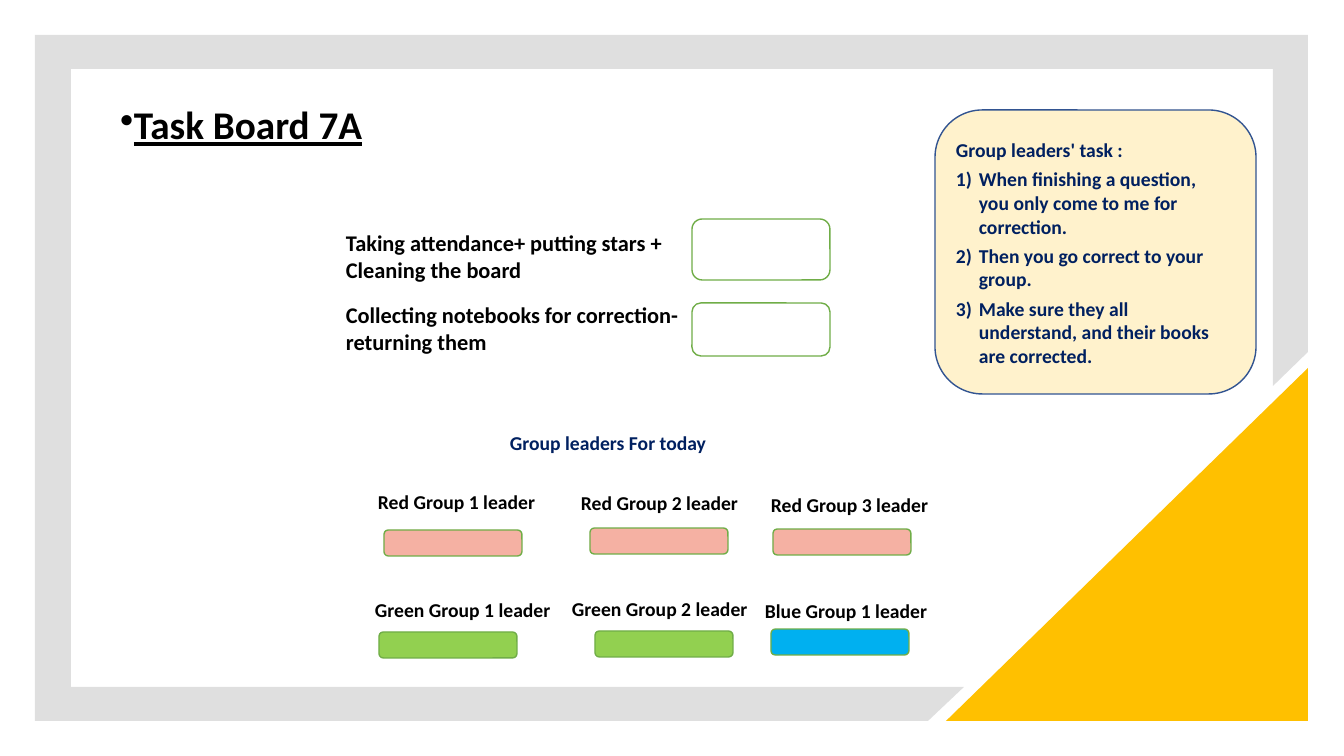
import pptx
import pptx.util
import pptx.dml.color
import pptx.enum.shapes
import pptx.enum.text
import pptx.oxml.ns
from dataclasses import dataclass
from lxml import etree

# Content: all places and lengths are px
TITLE = "Task Board 7A"
CARD_HEADING = "Group leaders' task :"
CARD_TASKS = [
    "When finishing a question, you only come to me for correction.",
    "Then you go correct to your group.",
    "Make sure they all understand, and their books are corrected.",
]
# duty, text top, answer box top, answer box height
DUTIES = [
    ("Taking attendance+ putting stars + Cleaning the board", 224, 219, 61),
    ("Collecting notebooks for correction- returning them", 296, 303, 53),
]
LEADERS_HEADING = "Group leaders For today"
# label, label left and top, name box left and top, colour
LEADERS = [
    ("Red Group 1 leader", (368, 485), (384, 530), "red"),
    ("Red Group 2 leader", (571, 486), (590, 528), "red"),
    ("Red Group 3 leader", (761, 488), (773, 529), "red"),
    ("Green Group 1 leader", (365, 593), (379, 632), "green"),
    ("Green Group 2 leader", (562, 592), (595, 631), "green"),
    ("Blue Group 1 leader", (755, 594), (771, 629), "blue"),
]
FRAME = [(35, 35), (1308, 35), (1308, 352), (1273, 386), (1273, 69), (71, 69),
         (71, 687), (964, 687), (928, 721), (35, 721)]
BOX_WIDTH, NAME_HEIGHT = 138, 26


@dataclass(frozen=True)
class Theme:
    font: str = "Calibri"
    black: str = "000000"
    white: str = "FFFFFF"
    navy: str = "002060"
    grey: str = "808080"
    gold: str = "FFC000"
    cream: str = "FFF2CC"
    card_line: str = "325491"
    box_line: str = "70AD47"
    red: str = "F5B1A3"
    green: str = "92D050"
    blue: str = "00B0F0"
    title_size: int = 28
    duty_size: int = 16
    label_size: int = 14


THEME = Theme()
SHAPE = pptx.enum.shapes.MSO_SHAPE
AUTO = pptx.enum.text.MSO_AUTO_SIZE
EMU_PER_PX = 914400 / 100.8


def px(length):
    return pptx.util.Emu(round(length * EMU_PER_PX))


def colour(code):
    return pptx.dml.color.RGBColor.from_string(code)


def paint(shape, fill, line=None):
    shape.shadow.inherit = False
    shape.fill.solid()
    shape.fill.fore_color.rgb = colour(fill)
    if line:
        shape.line.color.rgb = colour(line)
        shape.line.width = pptx.util.Pt(1)
    else:
        shape.line.fill.background()


def add_box(page, kind, place, fill, line=None):
    shape = page.shapes.add_shape(kind, *map(px, place))
    paint(shape, fill, line)
    return shape


def add_marker(para, left, hanging, tag, **attributes):
    properties = para._p.get_or_add_pPr()
    properties.set("marL", str(px(left)))
    properties.set("indent", str(px(-hanging)))
    etree.SubElement(properties, pptx.oxml.ns.qn(tag), **attributes)


def write(para, words, size, ink, after):
    para.alignment = pptx.enum.text.PP_ALIGN.LEFT
    para.space_before = pptx.util.Pt(0)
    para.space_after = pptx.util.Pt(after)
    span = para.add_run()
    span.text = words
    span.font.name = THEME.font
    span.font.size = pptx.util.Pt(size)
    span.font.bold = True
    span.font.color.rgb = colour(ink)
    return span


def add_text(page, place, words, size=THEME.label_size, ink=THEME.black, after=4.2):
    box = page.shapes.add_textbox(*map(px, place))
    box.text_frame.word_wrap = True
    box.text_frame.auto_size = AUTO.SHAPE_TO_FIT_TEXT
    write(box.text_frame.paragraphs[0], words, size, ink, after)
    return box


def add_background(page):
    builder = page.shapes.build_freeform(*FRAME[0], scale=EMU_PER_PX)
    builder.add_line_segments(FRAME[1:], close=True)
    frame = builder.convert_to_shape()
    paint(frame, THEME.grey)
    tint = frame.fill._xPr.find(".//" + pptx.oxml.ns.qn("a:srgbClr"))
    etree.SubElement(tint, pptx.oxml.ns.qn("a:alpha"), val="25000")
    corner = add_box(page, SHAPE.RIGHT_TRIANGLE, (946, 368, 362, 353), THEME.gold)
    corner._element.spPr.get_or_add_xfrm().set("flipH", "1")


def add_title(page):
    title = page.shapes.title
    title.left, title.top, title.width, title.height = map(px, (110, 101, 305, 198))
    frame = title.text_frame
    frame.word_wrap = True
    frame.auto_size = AUTO.NONE
    frame.vertical_anchor = pptx.enum.text.MSO_ANCHOR.TOP
    para = frame.paragraphs[0]
    add_marker(para, 0, 13, "a:buChar", char="•")
    para.line_spacing = 0.9
    write(para, TITLE, THEME.title_size, THEME.black, 3.1).font.underline = True


def add_card(page):
    add_box(page, SHAPE.ROUNDED_RECTANGLE, (935, 110, 321, 284),
            THEME.cream, THEME.card_line)
    box = add_text(page, (946, 133, 292, 241), CARD_HEADING, ink=THEME.navy)
    for task in CARD_TASKS:
        para = box.text_frame.add_paragraph()
        add_marker(para, 23, 23, "a:buAutoNum", type="arabicParenR")
        write(para, task, THEME.label_size, THEME.navy, 4.2)


def add_duties(page):
    for duty, text_top, box_top, box_height in DUTIES:
        add_box(page, SHAPE.ROUNDED_RECTANGLE, (692, box_top, BOX_WIDTH, box_height),
                THEME.white, THEME.box_line)
        add_text(page, (336, text_top, 403, 65), duty, THEME.duty_size, after=5.9)


def add_leaders(page):
    add_text(page, (500, 426, 247, 34), LEADERS_HEADING, ink=THEME.navy)
    for label, label_at, box_at, group in LEADERS:
        add_text(page, (*label_at, 268, 34), label)
        add_box(page, SHAPE.ROUNDED_RECTANGLE, (*box_at, BOX_WIDTH, NAME_HEIGHT),
                getattr(THEME, group), THEME.box_line)


def main():
    deck = pptx.Presentation()
    deck.slide_width, deck.slide_height = px(1344), px(756)
    page = deck.slides.add_slide(deck.slide_layouts[5])
    add_background(page)
    add_title(page)
    add_card(page)
    add_duties(page)
    add_leaders(page)
    deck.save("out.pptx")


if __name__ == "__main__":
    main()
